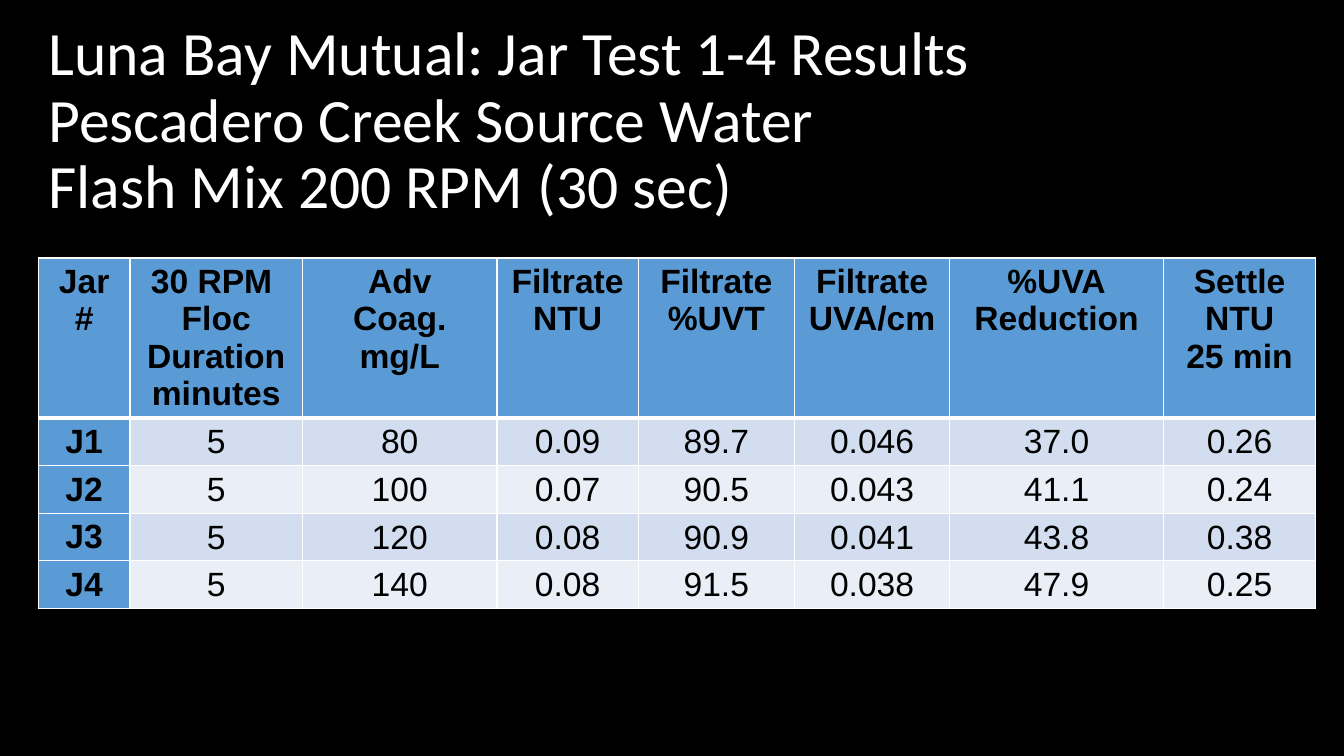
"""Build the jar test results slide."""
from dataclasses import dataclass

from lxml import etree
from pptx import Presentation
from pptx.dml.color import RGBColor
from pptx.enum.text import MSO_ANCHOR, MSO_AUTO_SIZE, PP_ALIGN
from pptx.oxml.ns import qn
from pptx.util import Inches, Pt

CENTER, LEFT = PP_ALIGN.CENTER, PP_ALIGN.LEFT
TOP, MIDDLE = MSO_ANCHOR.TOP, MSO_ANCHOR.MIDDLE
NO_AUTOFIT = MSO_AUTO_SIZE.NONE

TITLE = [
    "Luna Bay Mutual: Jar Test 1-4 Results",
    "Pescadero Creek Source Water",
    "Flash Mix 200 RPM (30 sec)",
]
ROWS = [
    ["Jar\n#", "30 RPM \nFloc\nDuration\nminutes", "Adv\nCoag.\nmg/L", "Filtrate\nNTU",
     "Filtrate\n%UVT", "Filtrate\nUVA/cm", "%UVA\nReduction", "Settle\nNTU\n25 min"],
    ["J1", "5", "80", "0.09", "89.7", "0.046", "37.0", "0.26"],
    ["J2", "5", "100", "0.07", "90.5", "0.043", "41.1", "0.24"],
    ["J3", "5", "120", "0.08", "90.9", "0.041", "43.8", "0.38"],
    ["J4", "5", "140", "0.08", "91.5", "0.038", "47.9", "0.25"],
]
COLUMN_WIDTHS = [0.91, 1.71, 1.93, 1.4, 1.55, 1.54, 2.12, 1.51]
HEADER_HEIGHT, ROW_HEIGHT = 1.57, 0.47
LABEL_MARGINS = (0.1, 0.05, 0.1, 0.05)
VALUE_MARGINS = (0.01, 0.01, 0.01, 0)


@dataclass(frozen=True)
class Theme:
    background: str = "000000"
    title: str = "FFFFFF"
    text: str = "000000"
    border: str = "FFFFFF"
    label: str = "5B9BD5"
    bands: tuple = ("D2DEEF", "EAEFF7")
    title_font: str = "Calibri"
    table_font: str = "Arial"
    title_size: int = 44
    table_size: int = 24
    thin: int = 1
    thick: int = 3


THEME = Theme()


def format_paragraph(p, font, size, color, align, bold=False):
    p.alignment = align
    for r in p.runs:
        r.font.name = font
        r.font.size = Pt(size)
        r.font.bold = bold
        r.font.color.rgb = RGBColor.from_string(color)


def add_border(cell, side, width):
    tc_pr = cell._tc.get_or_add_tcPr()
    line = etree.SubElement(tc_pr, qn(f"a:ln{side}"), w=str(Pt(width)))
    fill = etree.SubElement(line, qn("a:solidFill"))
    etree.SubElement(fill, qn("a:srgbClr"), val=THEME.border)


def format_cell(cell, text, row, column):
    is_label = row == 0 or column == 0
    cell.text_frame.text = text
    for p in cell.text_frame.paragraphs:
        format_paragraph(p, THEME.table_font, THEME.table_size, THEME.text, CENTER, is_label)
    margins = LABEL_MARGINS if is_label else VALUE_MARGINS
    cell.margin_left, cell.margin_top, cell.margin_right, cell.margin_bottom = map(Inches, margins)
    cell.vertical_anchor = TOP if is_label else MIDDLE
    for side in "LRTB":
        under_header = (row, side) in ((0, "B"), (1, "T"))
        add_border(cell, side, THEME.thick if under_header else THEME.thin)
    cell.fill.solid()
    color = THEME.label if is_label else THEME.bands[(row - 1) % 2]
    cell.fill.fore_color.rgb = RGBColor.from_string(color)


def add_title(s):
    sp = s.shapes.title
    sp.left, sp.top, sp.width, sp.height = map(Inches, (0.38, 0.12, 12.04, 2.19))
    tf = sp.text_frame
    tf.text = "\v".join(TITLE)
    tf.word_wrap = True
    tf.auto_size = NO_AUTOFIT
    tf.vertical_anchor = MIDDLE
    p = tf.paragraphs[0]
    p.line_spacing = 0.9
    format_paragraph(p, THEME.title_font, THEME.title_size, THEME.title, LEFT)


def add_results(s):
    heights = [HEADER_HEIGHT] + [ROW_HEIGHT] * (len(ROWS) - 1)
    frame = s.shapes.add_table(
        len(ROWS), len(COLUMN_WIDTHS), Inches(0.38), Inches(2.56),
        Inches(sum(COLUMN_WIDTHS)), Inches(sum(heights)))
    table = frame.table
    table.first_col = True
    table.horz_banding = False
    for column, width in zip(table.columns, COLUMN_WIDTHS):
        column.width = Inches(width)
    for row, height in zip(table.rows, heights):
        row.height = Inches(height)
    for i, texts in enumerate(ROWS):
        for j, text in enumerate(texts):
            format_cell(table.cell(i, j), text, i, j)


def main():
    prs = Presentation()
    prs.slide_width, prs.slide_height = Inches(13.33), Inches(7.5)
    s = prs.slides.add_slide(prs.slide_layouts.get_by_name("Title Only"))
    s.background.fill.solid()
    s.background.fill.fore_color.rgb = RGBColor.from_string(THEME.background)
    add_title(s)
    add_results(s)
    prs.save("out.pptx")


if __name__ == "__main__":
    main()
